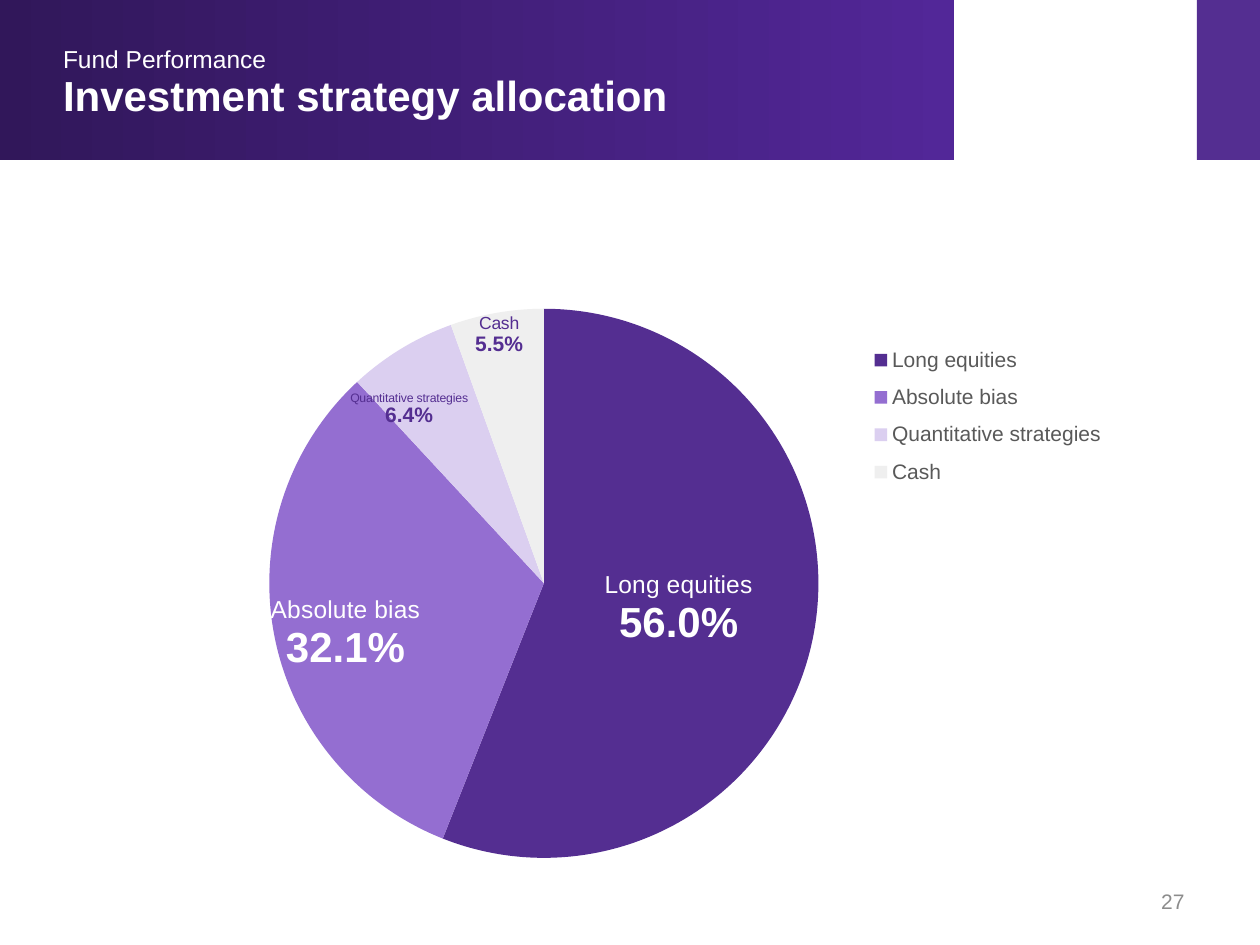
from lxml import etree
from pptx import Presentation
from pptx.chart import data as chart_data
from pptx.dml import color
from pptx.enum import chart as ch, shapes, text
from pptx.oxml import ns
from pptx.util import Pt

FONT = "Arial"
PURPLE, WHITE = "542E91", "FFFFFF"
# name, share, fill, label colour, name size, share size, label shift (x, y)
STRATEGIES = [
    ("Long equities", 56, PURPLE, WHITE, 14, 24, None),
    ("Absolute bias", 32.1, "946ED1", WHITE, 14, 24, (-0.06, 0.04)),
    ("Quantitative strategies", 6.4, "DBCFF0", PURPLE, 7, 12, (-0.06, -0.09)),
    ("Cash", 5.5, "EFEFEF", PURPLE, 10, 12, (-0.02, -0.18)),
]


def rgb(value):
    return color.RGBColor.from_string(value)


def style_font(font, size, fill, bold=False):
    font.name, font.size, font.bold = FONT, Pt(size), bold
    font.color.rgb = rgb(fill)


def add_text(slide, words, box, size, fill, bold=False, inset=0,
             align=text.PP_ALIGN.LEFT, anchor=text.MSO_ANCHOR.TOP):
    frame = slide.shapes.add_textbox(*map(Pt, box)).text_frame
    frame.word_wrap = True
    frame.vertical_anchor = anchor
    frame.margin_left = frame.margin_right = Pt(inset)
    frame.margin_top = frame.margin_bottom = Pt(inset / 2)
    line = frame.paragraphs[0]
    line.alignment = align
    run = line.add_run()
    run.text = words
    style_font(run.font, size, fill, bold)


def add_block(slide, box):
    block = slide.shapes.add_shape(shapes.MSO_SHAPE.RECTANGLE, *map(Pt, box))
    block.shadow.inherit = False
    block.line.fill.background()
    return block


def add_header(slide, box):
    left, top, width, height = box
    # Gradient band and accent at the right edge
    band = add_block(slide, (left, top, 545, height))
    band.fill.gradient()
    band.fill.gradient_angle = 0
    for stop, fill, place in zip(band.fill.gradient_stops, ("31175A", "522798"), (0, 1)):
        stop.color.rgb, stop.position = rgb(fill), place
    accent = add_block(slide, (left + width - 36, top, 36, height))
    accent.fill.solid()
    accent.fill.fore_color.rgb = rgb(PURPLE)
    # Title and the line above it
    add_text(slide, "Investment strategy allocation", (left + 36, top + 29, 480, 39.6),
             24, WHITE, bold=True, anchor=text.MSO_ANCHOR.BOTTOM)
    add_text(slide, "Fund Performance", (left + 36, top + 25.2, 480, 16.6), 14, WHITE)


def manual_layout(x, y, size=None, inner=False):
    """Chart layout in fractions of the chart; without a size, x and y are shifts."""
    layout = etree.Element(ns.qn("c:layout"))
    manual = etree.SubElement(layout, ns.qn("c:manualLayout"))
    settings = []
    if inner:
        settings.append(("layoutTarget", "inner"))
    if size:
        settings += [("xMode", "edge"), ("yMode", "edge")]
    settings += [("x", x), ("y", y)]
    if size:
        settings += zip("wh", size)
    for tag, value in settings:
        etree.SubElement(manual, ns.qn("c:" + tag)).set("val", str(value))
    return layout


def set_layout(parent, layout, after=None):
    for old in parent.findall(ns.qn("c:layout")):
        parent.remove(old)
    if after is None:
        parent.insert(0, layout)
    else:
        parent.find(ns.qn(after)).addnext(layout)


def add_allocation_pie(slide, box):
    shares = chart_data.CategoryChartData(number_format="0.0")
    shares.categories = [strategy[0] for strategy in STRATEGIES]
    shares.add_series("Series 1", [strategy[1] for strategy in STRATEGIES])
    pie = slide.shapes.add_chart(ch.XL_CHART_TYPE.PIE, *map(Pt, box), shares).chart
    pie.has_title = False
    style_font(pie.font, 10, "000000")

    # Legend and plot area
    pie.has_legend = True
    pie.legend.position = ch.XL_LEGEND_POSITION.RIGHT
    pie.legend.include_in_layout = False
    style_font(pie.legend.font, 12, "595959")
    set_layout(pie.legend._element, manual_layout(0.76, 0.14, (0.23, 0.26)), "c:legendPos")
    plot = pie.plots[0]
    plot.vary_by_categories = True
    set_layout(plot._element.getparent(), manual_layout(0.19, 0.1, (0.53, 0.87), inner=True))

    # Slices with their two-line labels
    series = plot.series[0]
    labels = series.data_labels
    labels.show_percentage, labels.show_value = True, False
    labels.number_format, labels.number_format_is_linked = "0.0%", False
    labels.position = ch.XL_LABEL_POSITION.CENTER
    style_font(labels.font, 12, "404040")
    for index, (name, share, fill, ink, name_size, share_size, shift) in enumerate(STRATEGIES):
        point = series.points[index]
        point.format.fill.solid()
        point.format.fill.fore_color.rgb = rgb(fill)
        frame = point.data_label.text_frame
        name_run = frame.paragraphs[0].add_run()
        share_run = frame.add_paragraph().add_run()
        name_run.text, share_run.text = name, f"{share:.1f}%"
        style_font(name_run.font, name_size, ink)
        style_font(share_run.font, share_size, ink, bold=True)
        point.data_label.position = ch.XL_LABEL_POSITION.CENTER
        if shift:
            label = series._element.xpath(f".//c:dLbl[c:idx/@val={index}]")[0]
            set_layout(label, manual_layout(*shift), "c:idx")


def main():
    deck = Presentation()
    deck.slide_width, deck.slide_height = Pt(720), Pt(540)
    slide = deck.slides.add_slide(deck.slide_layouts[6])
    add_header(slide, (0, 0, 720, 91.4))
    add_allocation_pie(slide, (36, 140.4, 604, 360.7))
    # Page number
    add_text(slide, "27", (516.2, 500.4, 167.8, 28.8), 12, "8C8C8C", inset=7.2,
             align=text.PP_ALIGN.RIGHT, anchor=text.MSO_ANCHOR.MIDDLE)
    deck.save("out.pptx")


if __name__ == "__main__":
    main()
